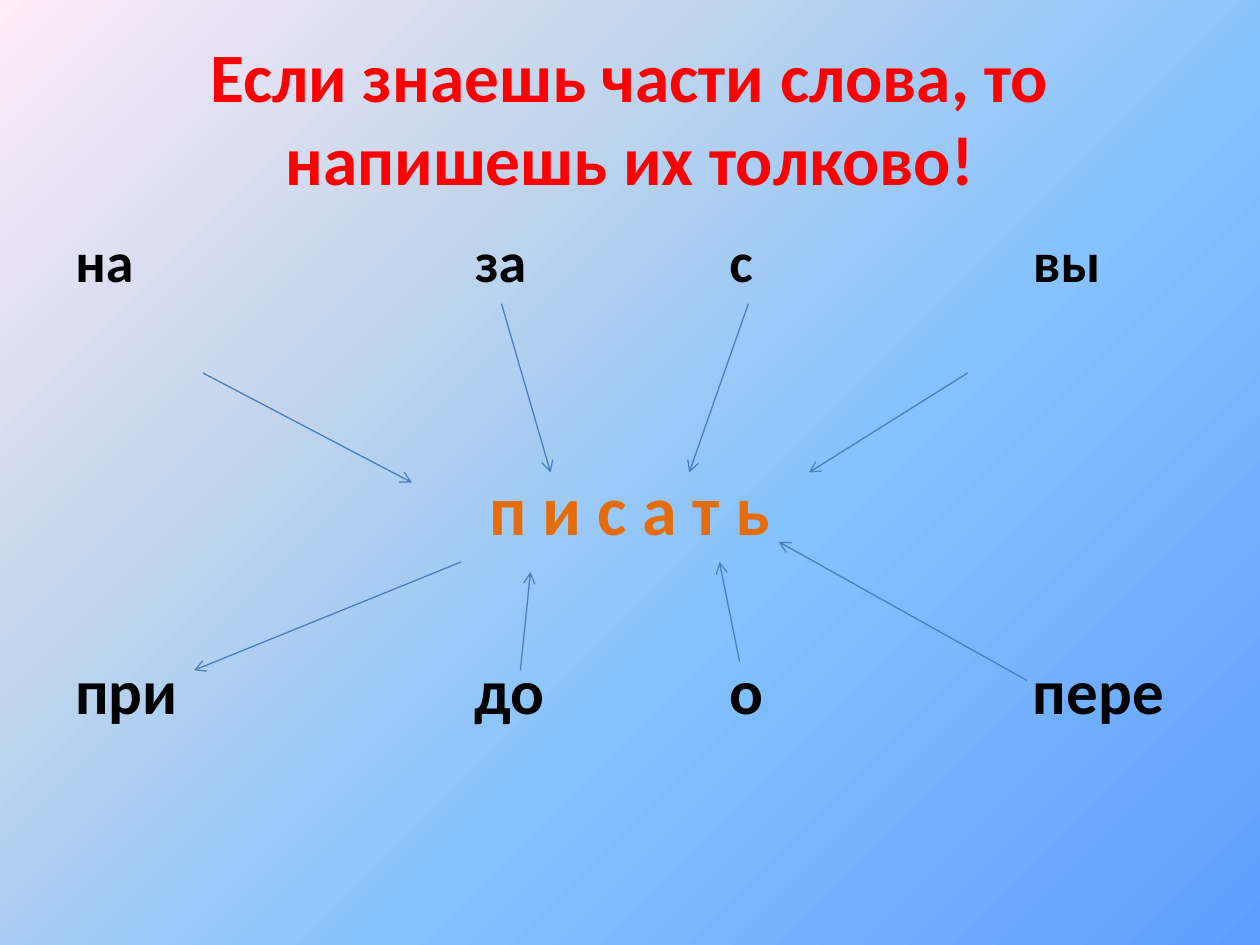
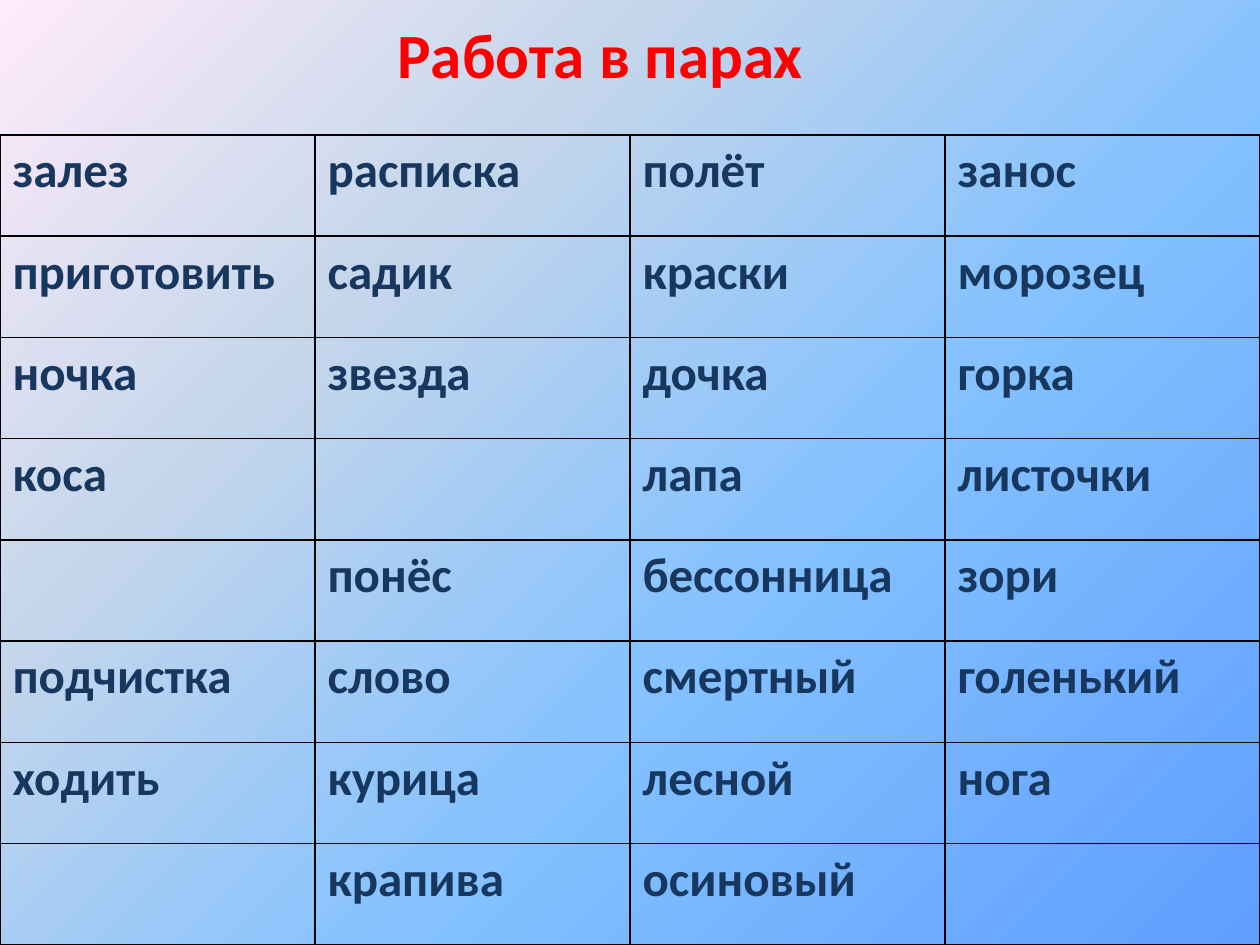
from lxml.etree import SubElement
from pptx import Presentation
from pptx.dml.color import RGBColor
from pptx.enum.shapes import MSO_CONNECTOR
from pptx.enum.text import MSO_ANCHOR, MSO_AUTO_SIZE, PP_ALIGN
from pptx.oxml.ns import qn
from pptx.util import Inches, Pt

STRAIGHT = MSO_CONNECTOR.STRAIGHT
MIDDLE = MSO_ANCHOR.MIDDLE
NO_FIT = MSO_AUTO_SIZE.NONE
LEFT, CENTER = PP_ALIGN.LEFT, PP_ALIGN.CENTER


class Theme:
    font = "Calibri"
    title, ink, root = "FF0000", "000000", "E46C0A"
    cell, arrow, grid = "17375E", "4B7EBC", "000000"
    back = [(0, "5E9EFF"), (40, "85C2FF"), (70, "C4D6EB"), (100, "FFEBFA")]
    title_size, pair_size, cell_size = 39.6, 36, 28
    top_size, root_size, low_size = 32, 40, 36


def style(para, size, color, align=LEFT):
    """Give a paragraph the bold deck font."""
    para.alignment = align
    font = para.font
    font.name, font.size, font.bold = Theme.font, Pt(size), True
    font.color.rgb = RGBColor.from_string(color)


def add_slide(layout, title, box, size):
    slide = prs.slides.add_slide(prs.slide_layouts[layout])
    head = slide.shapes.title
    head.left, head.top, head.width, head.height = map(Inches, box)
    frame = head.text_frame
    frame.text = title
    frame.auto_size, frame.vertical_anchor = NO_FIT, MIDDLE
    style(frame.paragraphs[0], size, Theme.title, CENTER)
    return slide


prs = Presentation()
prs.slide_width, prs.slide_height = Inches(10), Inches(7.5)

# Shared gradient background
master = prs.slide_master
fill = master.background.fill
fill.gradient()
fill.gradient_angle = 135
stops = master.element.find(".//" + qn("a:gsLst"))
for old in list(stops):
    stops.remove(old)
for pos, color in Theme.back:
    stop = SubElement(stops, qn("a:gs"), pos=str(pos * 1000))
    SubElement(stop, qn("a:srgbClr"), val=color)

# Slide 1: prefixes around the root word
slide = add_slide(1, "Если знаешь части слова, то напишешь их толково!",
                  (0.5, 0.3, 9, 1.25), Theme.title_size)
body = slide.placeholders[1]
body.left, body.top, body.width, body.height = map(Inches, (0.5, 1.75, 9, 4.95))
frame = body.text_frame
frame.text = "п и с а т ь"
frame.auto_size, frame.vertical_anchor = NO_FIT, MIDDLE
frame.margin_bottom = Inches(0.44)
para = frame.paragraphs[0]
style(para, Theme.root_size, Theme.root, CENTER)
para.space_before = Pt(0)
props = para._p.get_or_add_pPr()
props.set("marL", "0")
props.set("indent", "0")
props.insert_element_before(props.makeelement(qn("a:buNone")), "a:defRPr")

columns = (0.5, 3.67, 5.69, 8.1)
rows = [
    (1.75, Theme.top_size, ("на", "за", "с", "вы")),
    (5.12, Theme.low_size, ("при", "до", "о", "пере")),
]
for top, size, parts in rows:
    for left, part in zip(columns, parts):
        box = slide.shapes.add_textbox(*map(Inches, (left, top, 1.4, 0.7)))
        box.text_frame.word_wrap = True
        box.text_frame.text = part
        style(box.text_frame.paragraphs[0], size, Theme.ink)

arrows = [
    (1.61, 2.96, 3.27, 3.83), (7.68, 2.96, 6.42, 3.75),
    (5.94, 2.41, 5.47, 3.75), (3.98, 2.41, 4.37, 3.75),
    (8.15, 5.4, 6.18, 4.3), (3.66, 4.46, 1.54, 5.32),
    (4.13, 5.32, 4.21, 4.54), (5.87, 5.25, 5.71, 4.46),
]
for ends in arrows:
    arrow = slide.shapes.add_connector(STRAIGHT, *map(Inches, ends))
    arrow.line.width = Pt(0.75)
    arrow.line.color.rgb = RGBColor.from_string(Theme.arrow)
    SubElement(arrow.line._get_or_add_ln(), qn("a:tailEnd"), type="arrow")
    SubElement(arrow._element.spPr, qn("a:effectLst"))

# Slide 2: word table
slide = add_slide(5, "Работа в парах", (1.85, 0, 5.83, 0.84), Theme.pair_size)
words = [
    ("залез", "расписка", "полёт", "занос"),
    ("приготовить", "садик", "краски", "морозец"),
    ("ночка", "звезда", "дочка", "горка"),
    ("коса", "", "лапа", "листочки"),
    ("", "понёс", "бессонница", "зори"),
    ("подчистка", "слово", "смертный", "голенький"),
    ("ходить", "курица", "лесной", "нога"),
    ("", "крапива", "осиновый", ""),
]
table = slide.shapes.add_table(len(words), len(words[0]), Inches(0), Inches(1.07),
                               Inches(10), Inches(6.43)).table
table.first_row = table.horz_banding = False
for r, row in enumerate(words):
    for c, word in enumerate(row):
        cell = table.cell(r, c)
        cell.text = word
        style(cell.text_frame.paragraphs[0], Theme.cell_size, Theme.cell)
        props = cell._tc.get_or_add_tcPr()
        for side in "LRTB":
            edge = SubElement(props, qn("a:ln" + side), w=str(Pt(1)))
            paint = SubElement(edge, qn("a:solidFill"))
            SubElement(paint, qn("a:srgbClr"), val=Theme.grid)
        cell.fill.background()

prs.save("out.pptx")
